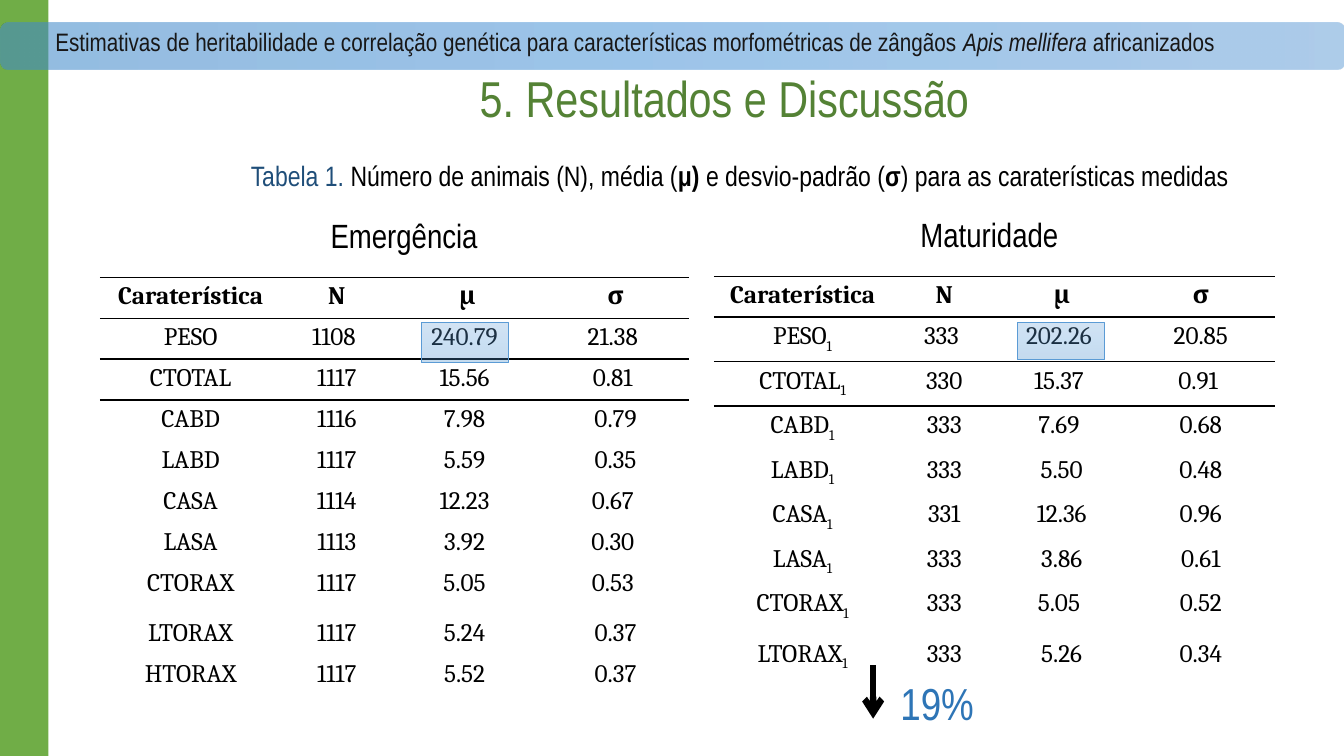
import collections

import lxml.etree
import pptx
import pptx.dml.color
import pptx.enum.dml
import pptx.enum.shapes
import pptx.enum.text
import pptx.oxml.ns
import pptx.util

Inches = pptx.util.Inches
RGBColor = pptx.dml.color.RGBColor
qn = pptx.oxml.ns.qn
Shape = pptx.enum.shapes.MSO_SHAPE
Align = pptx.enum.text.PP_ALIGN
Anchor = pptx.enum.text.MSO_ANCHOR
Box = collections.namedtuple("Box", "left top width height")

BLACK = RGBColor(0x00, 0x00, 0x00)
WHITE = RGBColor(0xFF, 0xFF, 0xFF)
INK = RGBColor(0x18, 0x17, 0x17)
GREEN = RGBColor(0x70, 0xAD, 0x47)
DARK_GREEN = RGBColor(0x54, 0x82, 0x35)
NAVY = RGBColor(0x1F, 0x4E, 0x79)
BLUE = RGBColor(0x2E, 0x75, 0xB6)
OUTLINE_BLUE = RGBColor(0x5B, 0x9B, 0xD5)
GLASS = [(0, RGBColor(0x71, 0xA6, 0xDB)), (50, RGBColor(0x55, 0x9B, 0xDB)),
         (100, RGBColor(0x44, 0x8A, 0xCA))]

NARROW = "Arial Narrow"
SERIF = "Cambria"
NO_TABLE_STYLE = "{2D5ABB26-0587-4C30-8999-92F81FD0307C}"
TALL_ROW = 7
TALL_HEIGHT = 0.5
HEADINGS = ("Caraterística", "N", "μ", "σ")
EMERGENCE = [
    ("PESO", "1108 ", "240.79 ", "21.38 "),
    ("CTOTAL", "1117", "15.56 ", "0.81 "),
    ("CABD", "1116", "7.98 ", "0.79"),
    ("LABD", "1117", "5.59 ", "0.35"),
    ("CASA", "1114", "12.23 ", "0.67 "),
    ("LASA", "1113", "3.92 ", "0.30 "),
    ("CTORAX", "1117", "5.05 ", "0.53 "),
    ("LTORAX", "1117", "5.24 ", "0.37"),
    ("HTORAX", "1117", "5.52 ", "0.37"),
]
MATURITY = [
    ("PESO", "333 ", "202.26 ", "20.85"),
    ("CTOTAL", "330", "15.37 ", "0.91 "),
    ("CABD", "333", "7.69 ", "0.68"),
    ("LABD", "333", "5.50", "0.48"),
    ("CASA", "331", "12.36", "0.96"),
    ("LASA", "333", "3.86", "0.61"),
    ("CTORAX", "333", "5.05 ", "0.52"),
    ("LTORAX", "333", "5.26", "0.34"),
]


def add_span(para, text, color, size, **formats):
    """Add one formatted run to a paragraph and return it."""
    span = para.add_run()
    span.text = text
    values = {"name": NARROW, "size": pptx.util.Pt(size)} | formats
    for name, value in values.items():
        setattr(span.font, name, value)
    span.font.color.rgb = color
    return span


def write(shape, spans, size, align=Align.LEFT, anchor=Anchor.TOP, spacing=None):
    """Write one paragraph of (text, colour, formats) spans in a shape."""
    frame = shape.text_frame
    frame.word_wrap = True
    frame.vertical_anchor = anchor
    para = frame.paragraphs[0]
    for name, value in {"alignment": align, "line_spacing": spacing}.items():
        setattr(para, name, value)
    for text, color, formats in spans:
        add_span(para, text, color, size, **formats)


def add_text(slide, box, spans, size, **layout):
    """Add a text box holding one paragraph."""
    write(slide.shapes.add_textbox(*map(Inches, box)), spans, size, **layout)


def add_block(slide, kind, box, color):
    """Add a plain filled shape without a line or shadow."""
    shape = slide.shapes.add_shape(kind, *map(Inches, box))
    shape.shadow.inherit = False
    shape.fill.solid()
    shape.fill.fore_color.rgb = color
    shape.line.fill.background()
    return shape


def fill_glass(shape, opacity):
    """Give a shape the translucent blue gradient."""
    shape.fill.gradient()
    shape.fill.gradient_angle = 270
    stops = shape._element.spPr.find(qn("a:gradFill")).find(qn("a:gsLst"))
    for stop in list(stops):
        stops.remove(stop)
    for position, color in GLASS:
        stop = lxml.etree.SubElement(stops, qn("a:gs"), pos=str(position * 1000))
        tone = lxml.etree.SubElement(stop, qn("a:srgbClr"), val=str(color))
        lxml.etree.SubElement(tone, qn("a:alpha"), val=str(opacity * 1000))


def add_banner(slide, box):
    """Add the translucent band with the study title."""
    left = box.left + (box.width - box.height) / 2
    top = box.top - (box.width - box.height) / 2
    upright = Box(left, top, box.height, box.width)
    band = add_block(slide, Shape.ROUNDED_RECTANGLE, upright, WHITE)
    band.rotation = 90
    fill_glass(band, 57)
    spans = [
        ("Estimativas de heritabilidade e correlação genética para "
         "características morfométricas de zângãos ", INK, {}),
        ("Apis mellifera ", INK, {"italic": True}),
        ("africanizados", INK, {}),
    ]
    add_text(slide, Box(box.left + 0.45, box.top - 0.01, box.width, 0.4), spans, 18)


def add_rule(cell, side):
    """Draw a black rule on the top (T) or bottom (B) of a cell."""
    line = lxml.etree.SubElement(cell._tc.get_or_add_tcPr(), qn("a:ln" + side), w="12700")
    fill = lxml.etree.SubElement(line, qn("a:solidFill"))
    lxml.etree.SubElement(fill, qn("a:srgbClr"), val=str(BLACK))


def add_measures(slide, box, widths, measures, subscript=""):
    """Add a table of measures that ends with an empty row."""
    rows = [HEADINGS, *measures, ("",) * len(HEADINGS)]
    frame = slide.shapes.add_table(len(rows), len(HEADINGS), *map(Inches, box))
    table = frame.table
    table.first_row = table.horz_banding = False
    table._tbl.tblPr.find(qn("a:tableStyleId")).text = NO_TABLE_STYLE
    for column, width in zip(table.columns, widths):
        column.width = Inches(width)
    usual_height = (box.height - TALL_HEIGHT) / (len(rows) - 1)
    for r, values in enumerate(rows):
        table.rows[r].height = Inches(TALL_HEIGHT if r == TALL_ROW else usual_height)
        for c, value in enumerate(values):
            cell = table.cell(r, c)
            for side in {0: "TB", 1: "TB", 2: "T"}.get(r, ""):
                add_rule(cell, side)
            cell.fill.background()
            para = cell.text_frame.paragraphs[0]
            para.alignment = Align.CENTER
            if value:
                add_span(para, value, BLACK, 18, name=SERIF, bold=r == 0)
            if subscript and c == 0 and 0 < r <= len(measures):
                index = add_span(para, subscript, BLACK, 18, name=SERIF, bold=False)
                index._r.get_or_add_rPr().set("baseline", "-25000")


def add_highlight(slide, box):
    """Add the tinted frame around a mean weight."""
    frame = add_block(slide, Shape.RECTANGLE, box, WHITE)
    fill_glass(frame, 31)
    frame.line.color.rgb = OUTLINE_BLUE
    frame.line.width = pptx.util.Pt(0.5)


def add_drop(slide, box):
    """Add the down arrow and the percentage beside it."""
    add_text(slide, box, [("19%", BLUE, {})], 32, align=Align.CENTER)
    ends = (box.left, box.top - 0.05, box.left, box.top + 0.48)
    arrow = slide.shapes.add_connector(
        pptx.enum.shapes.MSO_CONNECTOR.STRAIGHT, *map(Inches, ends))
    arrow.line.color.rgb = BLACK
    arrow.line.width = pptx.util.Pt(4.5)
    properties = arrow._element.spPr
    lxml.etree.SubElement(properties.find(qn("a:ln")), qn("a:tailEnd"), type="arrow")
    lxml.etree.SubElement(properties, qn("a:effectLst"))


def build_results_slide(slide, page):
    """Place every region of the results slide on the page."""
    add_block(slide, Shape.RECTANGLE, Box(page.left, page.top, 0.48, page.height), GREEN)
    add_banner(slide, Box(page.left, page.top + 0.22, page.width, 0.47))
    add_measures(slide, Box(0.99, 2.75, 5.83, 4.56), (1.8, 1.1, 1.49, 1.45), EMERGENCE)
    caption = [
        ("Tabela 1. ", NAVY, {}),
        ("Número de animais (N), média (", BLACK, {}),
        ("μ) ", BLACK, {"bold": True}),
        ("e desvio-padrão (", BLACK, {}),
        ("σ", BLACK, {"bold": True}),
        (") para as caraterísticas medidas", BLACK, {}),
    ]
    add_text(slide, Box(1.33, 1.36, 12.01, 0.58), caption, 20,
             align=Align.CENTER, spacing=1.5)
    add_measures(slide, Box(7.08, 2.74, 5.56, 4.15), (1.76, 1.05, 1.28, 1.48), MATURITY, "1")
    add_highlight(slide, Box(4.18, 3.2, 0.86, 0.4))
    add_highlight(slide, Box(10.09, 3.2, 0.86, 0.37))
    add_drop(slide, Box(8.66, 6.65, 1.27, 0.64))
    add_text(slide, Box(1.4, -0.16, 11.57, 2.32),
             [("5. Resultados e Discussão", DARK_GREEN, {})], 36,
             align=Align.CENTER, anchor=Anchor.MIDDLE, spacing=0.9)
    emergence = add_block(slide, Shape.RECTANGLE, Box(3.18, 2.08, 1.91, 0.5), WHITE)
    write(emergence, [("Emergência", BLACK, {})], 24)
    add_text(slide, Box(9.03, 2.07, 1.82, 0.5), [("Maturidade", BLACK, {})], 24)


def main():
    """Build and save the deck."""
    deck = pptx.Presentation()
    page = Box(0, 0, 13.33, 7.5)
    deck.slide_width, deck.slide_height = Inches(page.width), Inches(page.height)
    build_results_slide(deck.slides.add_slide(deck.slide_layouts[6]), page)
    deck.save("out.pptx")


if __name__ == "__main__":
    main()
